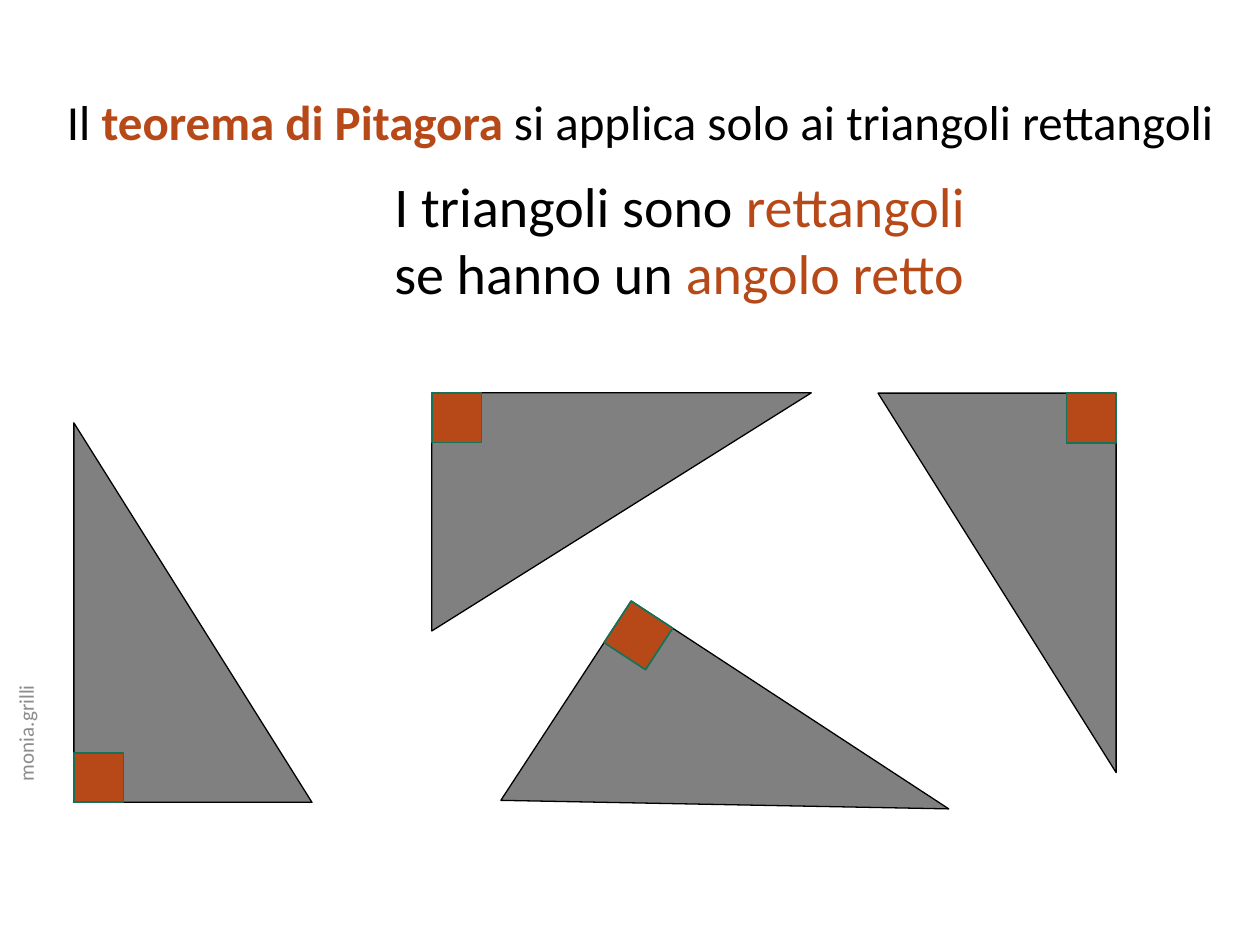
from math import cos, radians, sin
from typing import NamedTuple

from pptx import Presentation
from pptx.dml.color import RGBColor
from pptx.enum.shapes import MSO_SHAPE as Shp
from pptx.enum.text import MSO_ANCHOR as Anchor, MSO_AUTO_SIZE as Fit, PP_ALIGN as Align
from pptx.util import Cm, Pt

BLACK = RGBColor(0x00, 0x00, 0x00)
GREY = RGBColor(0x80, 0x80, 0x80)
PALE = RGBColor(0x8C, 0x8C, 0x8C)
RUST = RGBColor(0xB7, 0x49, 0x19)
GREEN = RGBColor(0x15, 0x72, 0x59)

BASE, HEIGHT, MARK = 4.8, 7.65, 1.0


class Span(NamedTuple):
    text: str
    color: RGBColor = BLACK
    bold: bool = False


class Label(NamedTuple):
    box: tuple[float, float, float, float]
    size: int
    lines: list[list[Span]]
    frame: dict
    align: Align = Align.LEFT
    rotation: float = 0


class Triangle(NamedTuple):
    cx: float
    cy: float
    rotation: float


class Style(NamedTuple):
    kind: Shp
    fill: RGBColor
    line: RGBColor
    weight: float


TRIANGLE_STYLE = Style(Shp.RIGHT_TRIANGLE, GREY, BLACK, 0.75)
MARK_STYLE = Style(Shp.RECTANGLE, RUST, GREEN, 1)

TRIANGLES = [
    Triangle(3.89, 12.35, 0),
    Triangle(12.53, 10.32, 90),
    Triangle(14.61, 16.22, 123.2),
    Triangle(20.1, 11.75, 180),
]

FITTED = {"word_wrap": False, "auto_size": Fit.SHAPE_TO_FIT_TEXT}
LABELS = [
    Label((1.1, 1.73, 23.67, 1.45), 28, [[
        Span("Il "),
        Span("teorema di Pitagora ", RUST, True),
        Span("si applica solo ai triangoli rettangoli"),
    ]], FITTED),
    Label((7.7, 3.33, 12.42, 3.0), 32, [
        [Span("I triangoli sono "), Span("rettangoli", RUST)],
        [Span("se hanno un "), Span("angolo retto", RUST)],
    ], FITTED),
    Label((-3.78, 14.27, 8.59, 1.02), 12, [[Span("monia.grilli", PALE)]],
          {"word_wrap": True, "vertical_anchor": Anchor.MIDDLE}, Align.CENTER, 270),
]


def add_label(shapes, label: Label) -> None:
    sp = shapes.add_textbox(*map(Cm, label.box))
    sp.rotation = label.rotation
    tf = sp.text_frame
    for name, value in label.frame.items():
        setattr(tf, name, value)
    for i, line in enumerate(label.lines):
        p = tf.add_paragraph() if i else tf.paragraphs[0]
        p.alignment = label.align
        for span in line:
            r = p.add_run()
            r.text = span.text
            r.font.color.rgb = span.color
            font = {"name": "Calibri", "size": Pt(label.size), "bold": span.bold}
            for name, value in font.items():
                setattr(r.font, name, value)


def add_centred(shapes, style: Style, cx: float, cy: float,
                width: float, height: float, rotation: float) -> None:
    sp = shapes.add_shape(style.kind, Cm(cx - width / 2), Cm(cy - height / 2),
                          Cm(width), Cm(height))
    sp.rotation = rotation
    sp.shadow.inherit = False
    sp.fill.solid()
    sp.fill.fore_color.rgb = style.fill
    sp.line.color.rgb = style.line
    sp.line.width = Pt(style.weight)


def add_triangle(shapes, tri: Triangle) -> None:
    group = shapes.add_group_shape().shapes
    add_centred(group, TRIANGLE_STYLE, tri.cx, tri.cy, BASE, HEIGHT, tri.rotation)
    dx, dy = (MARK - BASE) / 2, (HEIGHT - MARK) / 2
    a = radians(tri.rotation)
    add_centred(group, MARK_STYLE,
                tri.cx + dx * cos(a) - dy * sin(a),
                tri.cy + dx * sin(a) + dy * cos(a),
                MARK, MARK, tri.rotation)


def main() -> None:
    prs = Presentation()
    prs.slide_width, prs.slide_height = Cm(25.4), Cm(19.05)
    shapes = prs.slides.add_slide(prs.slide_layouts[6]).shapes
    *headings, author = LABELS
    for label in headings:
        add_label(shapes, label)
    for tri in TRIANGLES:
        add_triangle(shapes, tri)
    add_label(shapes, author)
    prs.save("out.pptx")


if __name__ == "__main__":
    main()
